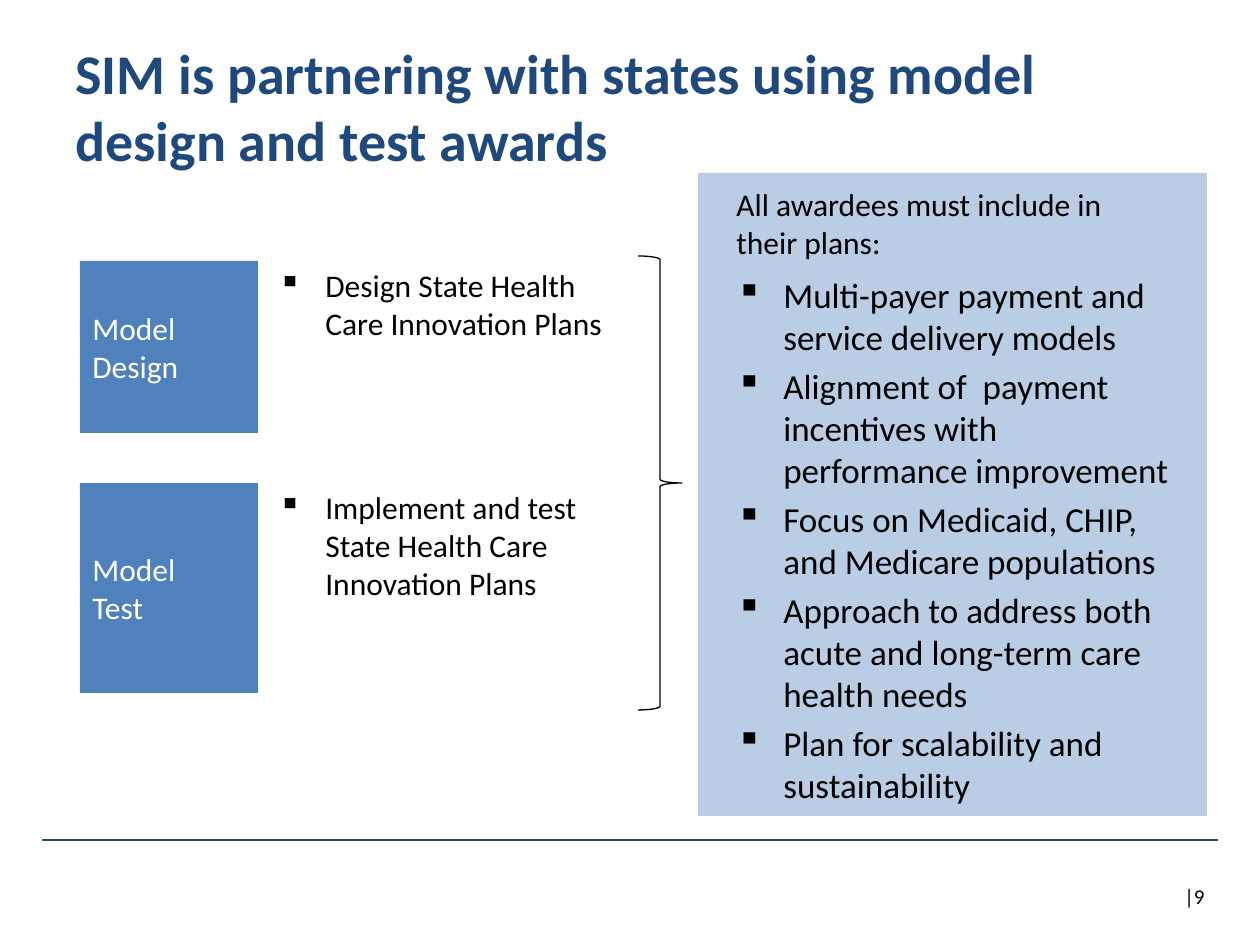
"""Build the slide on state model design and test awards."""
from dataclasses import dataclass
from typing import Any, NamedTuple, Optional

from lxml.etree import SubElement
from pptx import Presentation
from pptx.dml.color import RGBColor
from pptx.enum.shapes import MSO_CONNECTOR, MSO_SHAPE
from pptx.enum.text import MSO_ANCHOR, PP_ALIGN
from pptx.oxml.ns import qn
from pptx.util import Emu, Pt

EMU_PER_PX = 914400 / 126


@dataclass(frozen=True)
class Theme:
    font: str = "Calibri"
    navy: RGBColor = RGBColor(0x1F, 0x49, 0x7D)
    blue: RGBColor = RGBColor(0x4F, 0x81, 0xBD)
    pale: RGBColor = RGBColor(0xB9, 0xCD, 0xE5)
    black: RGBColor = RGBColor(0, 0, 0)
    white: RGBColor = RGBColor(0xFF, 0xFF, 0xFF)
    title_size: int = 32
    list_size: int = 20
    text_size: int = 18
    number_size: int = 12
    line_width: float = 0.75
    bullet: str = "▪"
    indent: int = 47


THEME = Theme()


class Box(NamedTuple):
    left: int
    top: int
    width: int
    height: int


@dataclass(frozen=True)
class TextBlock:
    box: Box
    lines: tuple[str, ...]
    size: int = THEME.text_size
    color: RGBColor = THEME.black
    bold: bool = False
    bulleted: bool = False
    alignment: PP_ALIGN = PP_ALIGN.LEFT


@dataclass(frozen=True)
class Award:
    label: str
    description: str
    top: int
    height: int
    text_height: int


AWARDS = (
    Award("Model Design", "Design State Health Care Innovation Plans", 261, 172, 89),
    Award("Model\nTest", "Implement and test  State Health Care Innovation Plans", 483, 210, 127),
)

TEXT_BLOCKS = (
    TextBlock(Box(63, 32, 1134, 148), ("SIM is partnering with states using model design and test awards",),
              THEME.title_size, THEME.navy, bold=True),
    TextBlock(Box(724, 179, 441, 89), ("All awardees must include in their plans:",)),
    TextBlock(Box(724, 267, 465, 555), (
        "Multi-payer payment and service delivery models",
        "Alignment of  payment incentives with performance improvement",
        "Focus on Medicaid, CHIP, and Medicare populations",
        "Approach to address both acute and long-term care health needs",
        "Plan for scalability and sustainability",
    ), THEME.list_size, bulleted=True),
    TextBlock(Box(1105, 877, 112, 38), ("|9",), THEME.number_size, alignment=PP_ALIGN.RIGHT),
)


def px(length: int) -> Emu:
    """Turn pixels into EMU."""
    return Emu(round(length * EMU_PER_PX))


def place(box: Box) -> tuple[Emu, ...]:
    """Turn a pixel box into EMU positions."""
    return tuple(px(length) for length in box)


def apply_format(target: Any, values: dict[str, Any]) -> None:
    """Set each named attribute on the target."""
    for name, value in values.items():
        setattr(target, name, value)


def add_bullet(paragraph: Any) -> None:
    """Give a paragraph a hanging square bullet."""
    properties = paragraph._p.get_or_add_pPr()
    properties.set("marL", str(px(THEME.indent)))
    properties.set("indent", str(-px(THEME.indent)))
    SubElement(properties, qn("a:buChar")).set("char", THEME.bullet)


def write_text(shape: Any, block: TextBlock, anchor: MSO_ANCHOR) -> None:
    """Write the lines of a block as paragraphs of a shape."""
    frame = shape.text_frame
    apply_format(frame, {"word_wrap": True, "vertical_anchor": anchor})
    for index, line in enumerate(block.lines):
        paragraph = frame.add_paragraph() if index else frame.paragraphs[0]
        paragraph.text = line
        paragraph.alignment = block.alignment
        if index:
            paragraph.space_before = Pt(block.size * 0.2)
        if block.bulleted:
            add_bullet(paragraph)
        for run in paragraph.runs:
            apply_format(run.font, {"name": THEME.font, "size": Pt(block.size), "bold": block.bold})
            run.font.color.rgb = block.color


def add_text(slide: Any, block: TextBlock) -> None:
    """Draw a text box."""
    write_text(slide.shapes.add_textbox(*place(block.box)), block, MSO_ANCHOR.TOP)


def add_panel(slide: Any, box: Box, fill: RGBColor) -> Any:
    """Draw a filled rectangle without an outline."""
    shape = slide.shapes.add_shape(MSO_SHAPE.RECTANGLE, *place(box))
    shape.shadow.inherit = False
    shape.fill.solid()
    shape.fill.fore_color.rgb = fill
    shape.line.fill.background()
    return shape


def add_award(slide: Any, award: Award) -> None:
    """Draw an award tile and its description."""
    box = Box(80, award.top, 178, award.height)
    label = TextBlock(box, (award.label,), color=THEME.white)
    write_text(add_panel(slide, box, THEME.blue), label, MSO_ANCHOR.MIDDLE)
    description_box = Box(266, award.top - 1, 382, award.text_height)
    add_text(slide, TextBlock(description_box, (award.description,), bulleted=True))


def set_line(shape: Any, color: RGBColor) -> None:
    """Give a shape or connector a thin line."""
    shape.line.color.rgb = color
    shape.line.width = Pt(THEME.line_width)


def add_brace(slide: Any, box: Box) -> None:
    """Draw the brace that joins the awards."""
    brace = slide.shapes.add_shape(MSO_SHAPE.RIGHT_BRACE, *place(box))
    brace.shadow.inherit = False
    brace.fill.background()
    set_line(brace, THEME.black)


def add_footer_rule(slide: Any, left: int, right: int, top: int) -> None:
    """Draw the line above the footer."""
    rule = slide.shapes.add_connector(MSO_CONNECTOR.STRAIGHT, px(left), px(top), px(right), px(top))
    set_line(rule, THEME.navy)
    SubElement(rule._element.spPr, qn("a:effectLst"))


def main() -> None:
    """Build and save the presentation."""
    presentation = Presentation()
    apply_format(presentation, {"slide_width": px(1260), "slide_height": px(945)})
    slide = presentation.slides.add_slide(presentation.slide_layouts[6])
    add_footer_rule(slide, 42, 1218, 840)
    add_panel(slide, Box(698, 173, 509, 643), THEME.pale)
    for award in AWARDS:
        add_award(slide, award)
    add_brace(slide, Box(638, 256, 44, 454))
    for block in TEXT_BLOCKS:
        add_text(slide, block)
    presentation.save("out.pptx")


if __name__ == "__main__":
    main()
